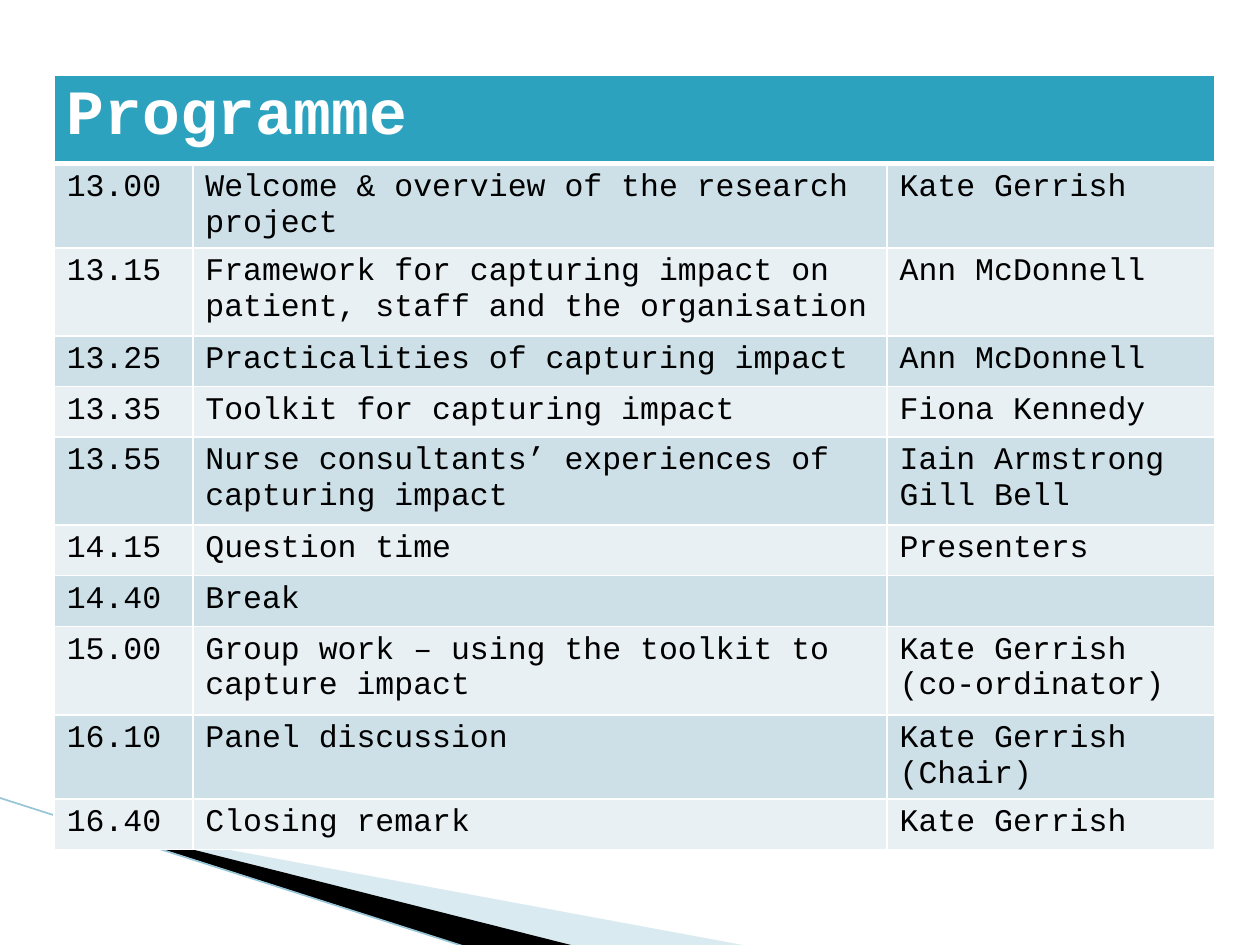
from dataclasses import dataclass

from lxml import etree
from pptx import Presentation
from pptx.dml.color import RGBColor
from pptx.enum.shapes import MSO_CONNECTOR
from pptx.oxml.ns import qn
from pptx.util import Inches, Pt

STRAIGHT = MSO_CONNECTOR.STRAIGHT
FONT = "Courier New"
COLORS = {
    "header": "2DA2BF",
    "odd_row": "CDE0E8",
    "even_row": "E8F0F4",
    "white": "FFFFFF",
    "black": "000000",
    "pale_wedge": "A0CBDC",
    "swoosh_line": "97C5D8",
}
COLUMN_WIDTHS = (1.1, 5.51, 2.6)
HEADER_HEIGHT = 0.7


@dataclass
class Session:
    time: str
    title: str
    speaker: str
    height: float = 0.4


@dataclass
class Wedge:
    points: list[tuple[float, float]]
    color: str
    opacity: int = 100


SESSIONS = [
    Session("13.00", "Welcome & overview of the research project", "Kate Gerrish"),
    Session("13.15", "Framework for capturing impact on patient, staff and the organisation",
            "Ann McDonnell", 0.7),
    Session("13.25", "Practicalities of capturing impact", "Ann McDonnell"),
    Session("13.35", "Toolkit for capturing impact", "Fiona Kennedy"),
    Session("13.55", "Nurse consultants’ experiences of capturing impact",
            "Iain Armstrong\vGill Bell", 0.7),
    Session("14.15", "Question time", "Presenters"),
    Session("14.40", "Break", ""),
    Session("15.00", "Group work – using the toolkit to capture impact",
            "Kate Gerrish\v(co-ordinator)", 0.7),
    Session("16.10", "Panel discussion", "Kate Gerrish (Chair)"),
    Session("16.40", "Closing remark", "Kate Gerrish"),
]
WEDGES = [
    Wedge([(0.55, 6.51), (5.95, 7.51), (4.56, 7.51), (0.55, 6.5)], "pale_wedge", 40),
    Wedge([(0.53, 6.49), (4.57, 7.51), (3.72, 7.52), (0.54, 6.5)], "black"),
]


def rgb(name: str) -> RGBColor:
    return RGBColor.from_string(COLORS[name])


def add_wedge(slide, wedge: Wedge) -> None:
    points = [(Inches(x), Inches(y)) for x, y in wedge.points]
    builder = slide.shapes.build_freeform(*points[0])
    builder.add_line_segments(points[1:], close=True)
    shape = builder.convert_to_shape()
    shape.shadow.inherit = False
    shape.fill.solid()
    shape.fill.fore_color.rgb = rgb(wedge.color)
    shape.line.fill.background()
    if wedge.opacity < 100:
        color = shape.fill._xPr.find(qn("a:solidFill"))[0]
        etree.SubElement(color, qn("a:alpha"), val=str(wedge.opacity * 1000))


def add_swoosh_line(slide) -> None:
    connector = slide.shapes.add_connector(
        STRAIGHT, Inches(-0.01), Inches(6.33), Inches(3.71), Inches(7.52))
    connector.line.color.rgb = rgb("swoosh_line")
    connector.line.width = Pt(0.95)
    etree.SubElement(connector._element.spPr, qn("a:effectLst"))


def set_borders(cell, top: int = 1, bottom: int = 1) -> None:
    properties = cell._tc.get_or_add_tcPr()
    for side, width in {"L": 1, "R": 1, "T": top, "B": bottom}.items():
        border = etree.SubElement(properties, qn(f"a:ln{side}"), w=str(Pt(width)))
        fill = etree.SubElement(border, qn("a:solidFill"))
        etree.SubElement(fill, qn("a:srgbClr"), val=COLORS["white"])


def style_cell(cell, fill: str, text: str, size: int, color: str, bold: bool) -> None:
    cell.fill.solid()
    cell.fill.fore_color.rgb = rgb(fill)
    cell.text_frame.text = text
    for run in cell.text_frame.paragraphs[0].runs:
        run.font.name = FONT
        run.font.size = Pt(size)
        run.font.bold = bold
        run.font.color.rgb = rgb(color)


def add_programme(slide) -> None:
    heights = [HEADER_HEIGHT] + [session.height for session in SESSIONS]
    table = slide.shapes.add_table(
        len(heights), len(COLUMN_WIDTHS), Inches(0.43), Inches(0.6),
        Inches(sum(COLUMN_WIDTHS)), Inches(sum(heights))).table
    for column, width in zip(table.columns, COLUMN_WIDTHS):
        column.width = Inches(width)
    for row, height in zip(table.rows, heights):
        row.height = Inches(height)

    for cell in table.rows[0].cells:
        set_borders(cell, bottom=3)
    table.cell(0, 0).merge(table.cell(0, len(COLUMN_WIDTHS) - 1))
    style_cell(table.cell(0, 0), "header", "Programme", 36, "white", True)

    for number, session in enumerate(SESSIONS, start=1):
        fill = "odd_row" if number % 2 else "even_row"
        texts = (session.time, session.title, session.speaker)
        for cell, text in zip(table.rows[number].cells, texts):
            set_borders(cell, top=3 if number == 1 else 1)
            style_cell(cell, fill, text, 18, "black", False)


def main() -> None:
    """Build the programme slide and save it."""
    presentation = Presentation()
    presentation.slide_width = Inches(10)
    presentation.slide_height = Inches(7.5)
    slide = presentation.slides.add_slide(presentation.slide_layouts[6])
    for wedge in WEDGES:
        add_wedge(slide, wedge)
    add_swoosh_line(slide)
    add_programme(slide)
    presentation.save("out.pptx")


if __name__ == "__main__":
    main()
